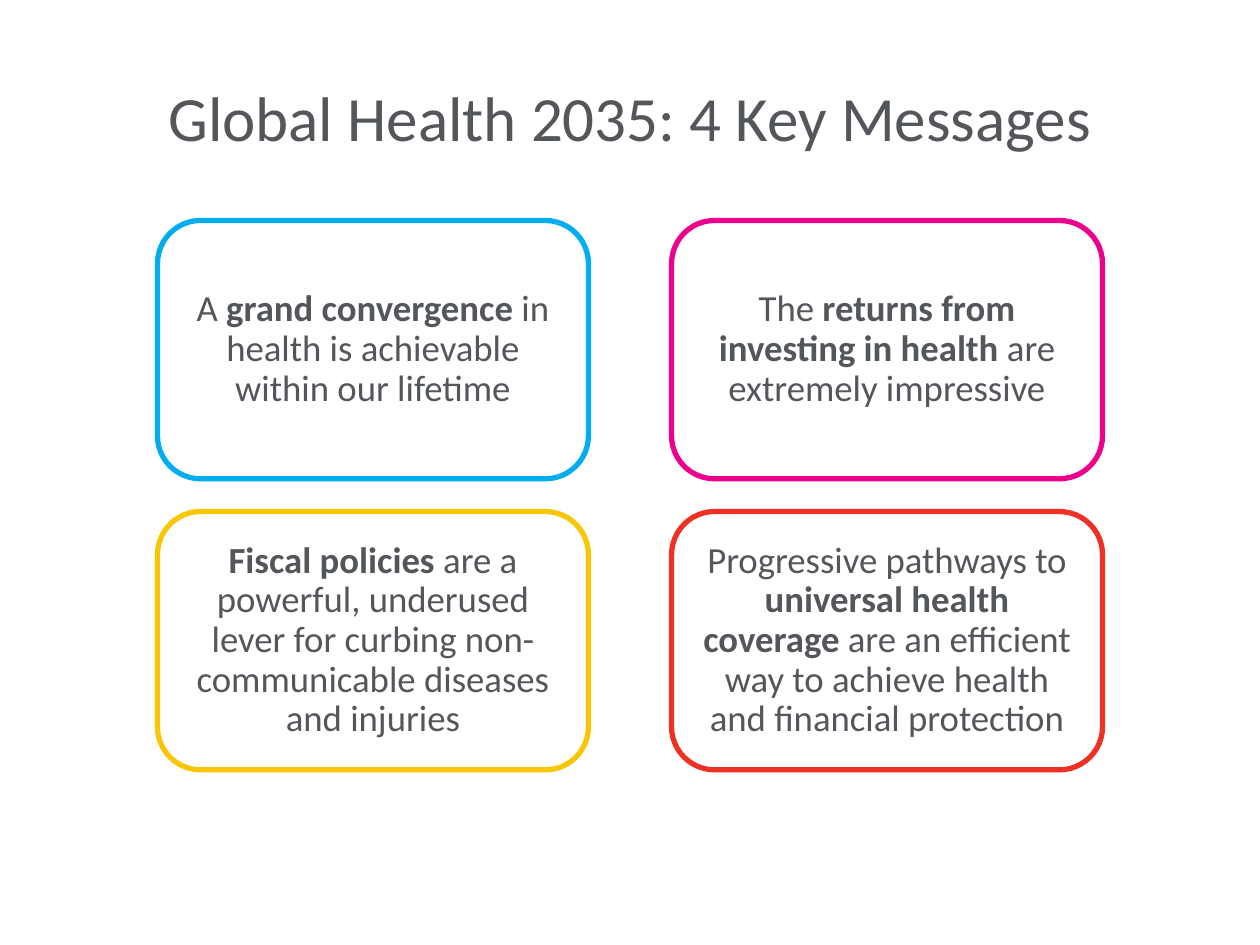
from dataclasses import dataclass

import pptx
import pptx.dml.color
import pptx.enum.shapes
import pptx.enum.text
import pptx.util

RGBColor = pptx.dml.color.RGBColor
WHITE = RGBColor(0xFF, 0xFF, 0xFF)
GRAY = RGBColor(0x53, 0x56, 0x5A)
BLUE = RGBColor(0x00, 0xAE, 0xEF)
PINK = RGBColor(0xEC, 0x00, 0x8C)
YELLOW = RGBColor(0xF9, 0xC6, 0x06)
RED = RGBColor(0xEE, 0x31, 0x24)

FONT = "Calibri"
GRID_LEFT, GRID_TOP = 1.25, 1.75
CARD_WIDTH, CARD_HEIGHT = 3.42, 2.05
COLUMN_STEP, ROW_STEP = 4.08, 2.31
CARD_INSET = 0.09


@dataclass(frozen=True)
class TextRun:
    text: str
    bold: bool = False


@dataclass(frozen=True)
class MessageCard:
    column: int
    row: int
    color: RGBColor
    runs: tuple[TextRun, ...]


CARDS = (
    MessageCard(0, 0, BLUE, (
        TextRun("A "),
        TextRun("grand convergence", True),
        TextRun(" in health is achievable within our lifetime"),
    )),
    MessageCard(1, 0, PINK, (
        TextRun("The "),
        TextRun("returns from investing in health", True),
        TextRun(" are extremely impressive"),
    )),
    MessageCard(0, 1, YELLOW, (
        TextRun("Fiscal policies ", True),
        TextRun("are a powerful, underused lever for curbing "
                "non-communicable diseases and injuries"),
    )),
    MessageCard(1, 1, RED, (
        TextRun("Progressive pathways to "),
        TextRun("universal health coverage ", True),
        TextRun("are an efficient way to achieve health and financial protection"),
    )),
)


def write_centered(shape, runs: tuple[TextRun, ...], size: float):
    frame = shape.text_frame
    frame.word_wrap = True
    frame.vertical_anchor = pptx.enum.text.MSO_ANCHOR.MIDDLE
    paragraph = frame.paragraphs[0]
    paragraph.alignment = pptx.enum.text.PP_ALIGN.CENTER
    for item in runs:
        run = paragraph.add_run()
        run.text = item.text
        run.font.name = FONT
        run.font.size = pptx.util.Pt(size)
        run.font.bold = item.bold
        run.font.color.rgb = GRAY
    return paragraph


def add_title(slide, text: str) -> None:
    box = slide.shapes.add_textbox(
        pptx.util.Inches(0.5), pptx.util.Inches(0.3),
        pptx.util.Inches(9), pptx.util.Inches(1.25),
    )
    write_centered(box, (TextRun(text),), 36)


def add_card(slide, card: MessageCard) -> None:
    shape = slide.shapes.add_shape(
        pptx.enum.shapes.MSO_SHAPE.ROUNDED_RECTANGLE,
        pptx.util.Inches(GRID_LEFT + card.column * COLUMN_STEP),
        pptx.util.Inches(GRID_TOP + card.row * ROW_STEP),
        pptx.util.Inches(CARD_WIDTH), pptx.util.Inches(CARD_HEIGHT),
    )
    shape.shadow.inherit = False
    shape.fill.solid()
    shape.fill.fore_color.rgb = WHITE
    shape.line.color.rgb = card.color
    shape.line.width = pptx.util.Pt(3)
    frame = shape.text_frame
    frame.margin_left = frame.margin_right = pptx.util.Inches(CARD_INSET)
    frame.margin_top = frame.margin_bottom = pptx.util.Inches(CARD_INSET)
    write_centered(shape, card.runs, 21).line_spacing = 0.9


def main() -> None:
    presentation = pptx.Presentation()
    presentation.slide_width = pptx.util.Inches(10)
    presentation.slide_height = pptx.util.Inches(7.5)
    slide = presentation.slides.add_slide(presentation.slide_layouts[6])
    add_title(slide, "Global Health 2035: 4 Key Messages")
    for card in CARDS:
        add_card(slide, card)
    presentation.save("out.pptx")


if __name__ == "__main__":
    main()
